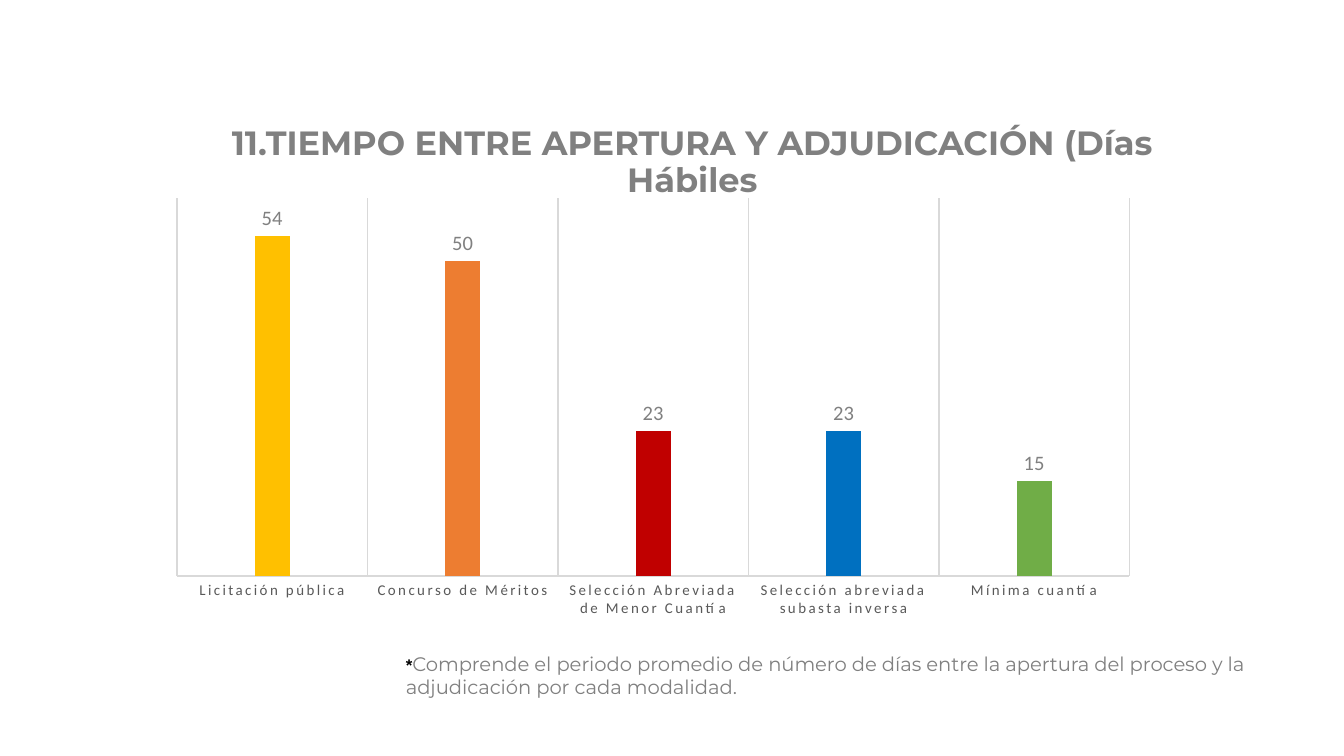
from dataclasses import dataclass

from lxml import etree
from pptx import Presentation
from pptx.chart.data import CategoryChartData
from pptx.dml.color import RGBColor
from pptx.enum.chart import XL_CHART_TYPE, XL_LABEL_POSITION, XL_TICK_MARK
from pptx.enum.text import MSO_ANCHOR, MSO_AUTO_SIZE, PP_ALIGN
from pptx.oxml.ns import qn
from pptx.util import Cm, Pt

COLUMN_CLUSTERED = XL_CHART_TYPE.COLUMN_CLUSTERED
OUTSIDE_END = XL_LABEL_POSITION.OUTSIDE_END
NO_TICK = XL_TICK_MARK.NONE
MIDDLE = MSO_ANCHOR.MIDDLE
NO_AUTOFIT = MSO_AUTO_SIZE.NONE
CENTER = PP_ALIGN.CENTER
TITLE_ONLY_LAYOUT = 5


@dataclass(frozen=True)
class Theme:
    heading_font: str = "Montserrat"
    chart_font: str = "Calibri"
    mark_font: str = "Arial"
    black: str = "000000"
    gray: str = "808080"
    axis_text: str = "595959"
    grid: str = "D9D9D9"
    title_size: float = 18
    note_size: float = 10.5
    mark_size: float = 9
    chart_size: float = 10
    value_size: float = 11
    category_size: float = 8
    category_spacing: int = 120  # hundredths of a point
    line_width: float = 0.75


THEME = Theme()

# Category, working days, column colour
DURATIONS = [
    ("Licitación pública", 54, "FFC000"),
    ("Concurso de Méritos", 50, "ED7D31"),
    ("Selección Abreviada de Menor Cuantía", 23, "C00000"),
    ("Selección abreviada subasta inversa", 23, "0070C0"),
    ("Mínima cuantía", 15, "70AD47"),
]

# Inner plot area as fractions of the chart
PLOT_LAYOUT = {"x": 0.02, "y": 0.02, "w": 0.96, "h": 0.865}


def style_font(font, name, size, color, bold=False):
    font.name = name
    font.size = Pt(size)
    font.bold = bold
    font.color.rgb = RGBColor.from_string(color)


def add_run(paragraph, text, *style):
    run = paragraph.add_run()
    run.text = text
    style_font(run.font, *style)


def style_line(line):
    line.color.rgb = RGBColor.from_string(THEME.grid)
    line.width = Pt(THEME.line_width)


def place_title(slide, left, top, width, height):
    title = slide.shapes.title
    title.left, title.top, title.width, title.height = left, top, width, height
    frame = title.text_frame
    frame.word_wrap = True
    frame.auto_size = NO_AUTOFIT
    frame.vertical_anchor = MIDDLE
    frame.margin_left = frame.margin_right = Cm(0.15)
    frame.margin_top = frame.margin_bottom = Cm(0.08)
    paragraph = frame.paragraphs[0]
    paragraph.alignment = CENTER
    paragraph.line_spacing = 0.9
    add_run(paragraph, "11.TIEMPO ENTRE APERTURA Y ADJUDICACIÓN (Días Hábiles",
            THEME.heading_font, THEME.title_size, THEME.gray, True)


def set_plot_layout(chart):
    plot_area = chart.element.find(".//" + qn("c:plotArea"))
    for old_layout in plot_area.findall(qn("c:layout")):
        plot_area.remove(old_layout)
    layout = etree.Element(qn("c:layout"))
    manual = etree.SubElement(layout, qn("c:manualLayout"))
    settings = {"layoutTarget": "inner", "xMode": "edge", "yMode": "edge", **PLOT_LAYOUT}
    for tag, value in settings.items():
        etree.SubElement(manual, qn("c:" + tag)).set("val", str(value))
    plot_area.insert(0, layout)


def place_duration_chart(slide, left, top, width, height):
    categories, days, colors = zip(*DURATIONS)
    chart_data = CategoryChartData(number_format="0")
    chart_data.categories = categories
    chart_data.add_series("Series 1", days)
    chart = slide.shapes.add_chart(
        COLUMN_CLUSTERED, left, top, width, height, chart_data).chart
    chart.has_legend = False
    chart.has_title = False
    style_font(chart.font, THEME.chart_font, THEME.chart_size, THEME.black)
    set_plot_layout(chart)

    # Axes
    value_axis = chart.value_axis
    value_axis.minimum_scale, value_axis.maximum_scale = 0, 60
    value_axis.has_major_gridlines = False
    value_axis.visible = False
    category_axis = chart.category_axis
    category_axis.major_tick_mark = category_axis.minor_tick_mark = NO_TICK
    category_axis.has_major_gridlines = True
    style_line(category_axis.major_gridlines.format.line)
    style_line(category_axis.format.line)
    style_font(category_axis.tick_labels.font,
               THEME.chart_font, THEME.category_size, THEME.axis_text)
    for properties in chart.element.xpath(".//c:catAx/c:txPr//a:defRPr"):
        properties.set("spc", str(THEME.category_spacing))

    # Columns and their values
    plot = chart.plots[0]
    plot.gap_width = 444
    plot.overlap = -90
    plot.vary_by_categories = False
    series = plot.series[0]
    for index, color in enumerate(colors):
        fill = series.points[index].format.fill
        fill.solid()
        fill.fore_color.rgb = RGBColor.from_string(color)
    labels = series.data_labels
    labels.show_value = True
    labels.position = OUTSIDE_END
    labels.number_format = "0"
    labels.number_format_is_linked = False
    style_font(labels.font, THEME.chart_font, THEME.value_size, THEME.gray)


def place_note(slide, left, top, width, height):
    frame = slide.shapes.add_textbox(left, top, width, height).text_frame
    frame.word_wrap = True
    paragraph = frame.paragraphs[0]
    add_run(paragraph, "*", THEME.mark_font, THEME.mark_size, THEME.black, True)
    add_run(paragraph,
            "Comprende el periodo promedio de número de días entre la apertura "
            "del proceso y la adjudicación por cada modalidad.",
            THEME.heading_font, THEME.note_size, THEME.gray)


def main():
    presentation = Presentation()
    presentation.slide_width = Cm(25.4)
    presentation.slide_height = Cm(14.29)
    slide = presentation.slides.add_slide(presentation.slide_layouts[TITLE_ONLY_LAYOUT])
    place_title(slide, Cm(3.28), Cm(2.41), Cm(19.61), Cm(1.35))
    place_duration_chart(slide, Cm(2.97), Cm(3.58), Cm(18.75), Cm(8.26))
    place_note(slide, Cm(7.42), Cm(12.19), Cm(17.07), Cm(1.75))
    presentation.save("out.pptx")


if __name__ == "__main__":
    main()
